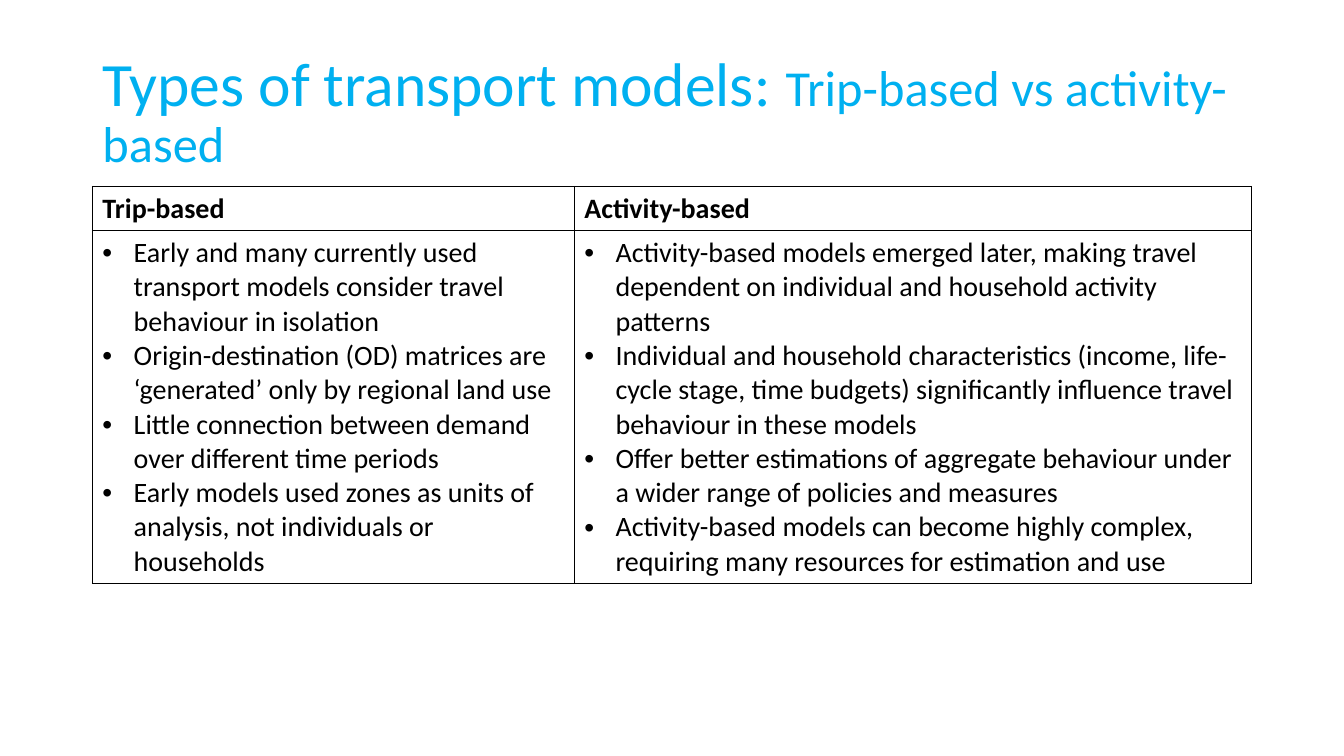
from dataclasses import dataclass
from typing import Any

from lxml import etree
from pptx import Presentation
from pptx import util as u
from pptx.dml.color import RGBColor
from pptx.enum import text
from pptx.oxml.ns import qn

COLUMNS, ROWS = 160, 90

MODELS = {
    "Trip-based": [
        "Early and many currently used transport models consider travel behaviour in isolation",
        "Origin-destination (OD) matrices are ‘generated’ only by regional land use",
        "Little connection between demand over different time periods",
        "Early models used zones as units of analysis, not individuals or households",
    ],
    "Activity-based": [
        "Activity-based models emerged later, making travel dependent on individual "
        "and household activity patterns",
        "Individual and household characteristics (income, life-cycle stage, time budgets) "
        "significantly influence travel behaviour in these models",
        "Offer better estimations of aggregate behaviour under a wider range of policies "
        "and measures",
        "Activity-based models can become highly complex, requiring many resources "
        "for estimation and use",
    ],
}


def colour(value):
    return RGBColor.from_string(value)


def add_text(para, words, size=20, color="000000", bold=False, font="Calibri"):
    span = para.add_run()
    span.text = words
    span.font.name = font
    span.font.size = u.Pt(size)
    span.font.bold = bold
    span.font.color.rgb = colour(color)


def add_bullet(para, indent=0.31):
    properties = para._p.get_or_add_pPr()
    properties.set("marL", str(u.Inches(indent)))
    properties.set("indent", str(-u.Inches(indent)))
    etree.SubElement(properties, qn("a:buFont"), typeface="Arial")
    etree.SubElement(properties, qn("a:buChar"), char="•")


def add_borders(cell, color, width):
    properties = cell._tc.get_or_add_tcPr()
    for index, side in enumerate(("lnL", "lnR", "lnT", "lnB")):
        line = etree.Element(qn(f"a:{side}"), w=str(u.Pt(width)))
        fill = etree.SubElement(line, qn("a:solidFill"))
        etree.SubElement(fill, qn("a:srgbClr"), val=color)
        properties.insert(index, line)


@dataclass
class Builder:
    """Style and current slide; lengths are grid columns and rows."""
    deck: Any
    page: Any
    accent: str = "00B0F0"
    ink: str = "000000"
    paper: str = "FFFFFF"

    def across(self, columns):
        return round(self.deck.slide_width * columns / COLUMNS)

    def down(self, rows):
        return round(self.deck.slide_height * rows / ROWS)

    def frame(self, left, top, width, height):
        return self.across(left), self.down(top), self.across(width), self.down(height)

    def title(self, spans, *place):
        box = self.page.shapes.title
        box.left, box.top, box.width, box.height = self.frame(*place)
        frame = box.text_frame
        frame.word_wrap = True
        frame.auto_size = text.MSO_AUTO_SIZE.NONE
        frame.vertical_anchor = text.MSO_ANCHOR.MIDDLE
        para = frame.paragraphs[0]
        para.alignment = text.PP_ALIGN.LEFT
        para.line_spacing = 0.9
        for words, size in spans:
            add_text(para, words, size=size, color=self.accent)

    def table(self, content, widths, heights, left, top):
        place = self.frame(left, top, sum(widths), sum(heights))
        table = self.page.shapes.add_table(len(heights), len(widths), *place).table
        for column, width in zip(table.columns, widths):
            column.width = self.across(width)
        for row, height in zip(table.rows, heights):
            row.height = self.down(height)
        for index, (heading, points) in enumerate(content.items()):
            self.cell(table.cell(0, index), [heading], bold=True)
            self.cell(table.cell(1, index), points, bullets=True)

    def cell(self, cell, lines, bold=False, bullets=False):
        cell.fill.solid()
        cell.fill.fore_color.rgb = colour(self.paper)
        add_borders(cell, self.ink, 1)
        frame = cell.text_frame
        for index, words in enumerate(lines):
            para = frame.add_paragraph() if index else frame.paragraphs[0]
            if bullets:
                add_bullet(para)
            add_text(para, words, color=self.ink, bold=bold)


def main():
    deck = Presentation()
    deck.slide_width, deck.slide_height = u.Inches(13.33), u.Inches(7.5)
    page = deck.slides.add_slide(deck.slide_layouts[5])
    builder = Builder(deck, page)

    # Comparison table
    builder.table(MODELS, widths=(57.36, 80.64), heights=(5.25, 41.2), left=11, top=22.2)

    # Title
    builder.title(
        [("Types of transport models: ", 44), ("Trip-based vs activity-based", 36)],
        11, 4.8, 149, 17.4,
    )
    deck.save("out.pptx")


if __name__ == "__main__":
    main()
